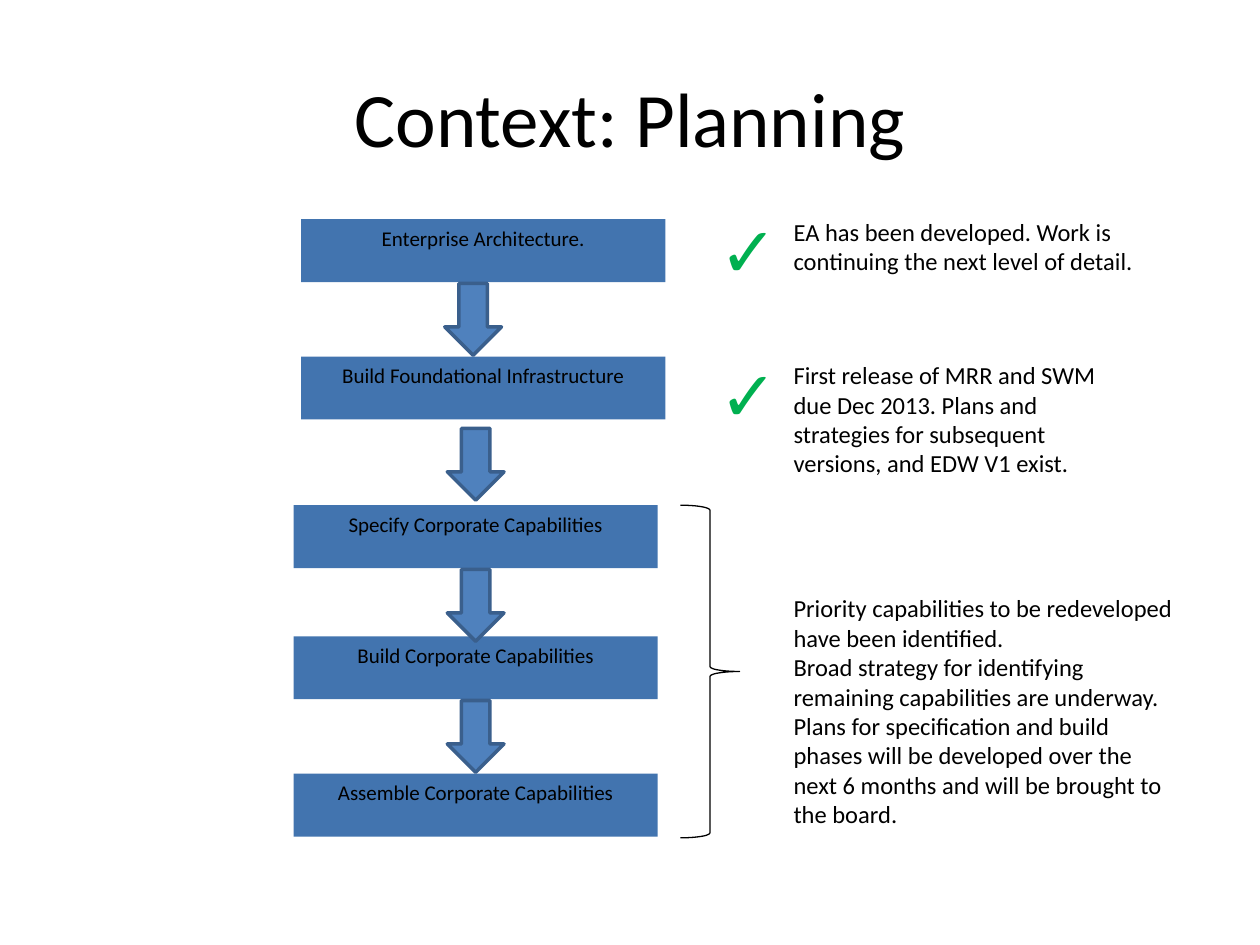
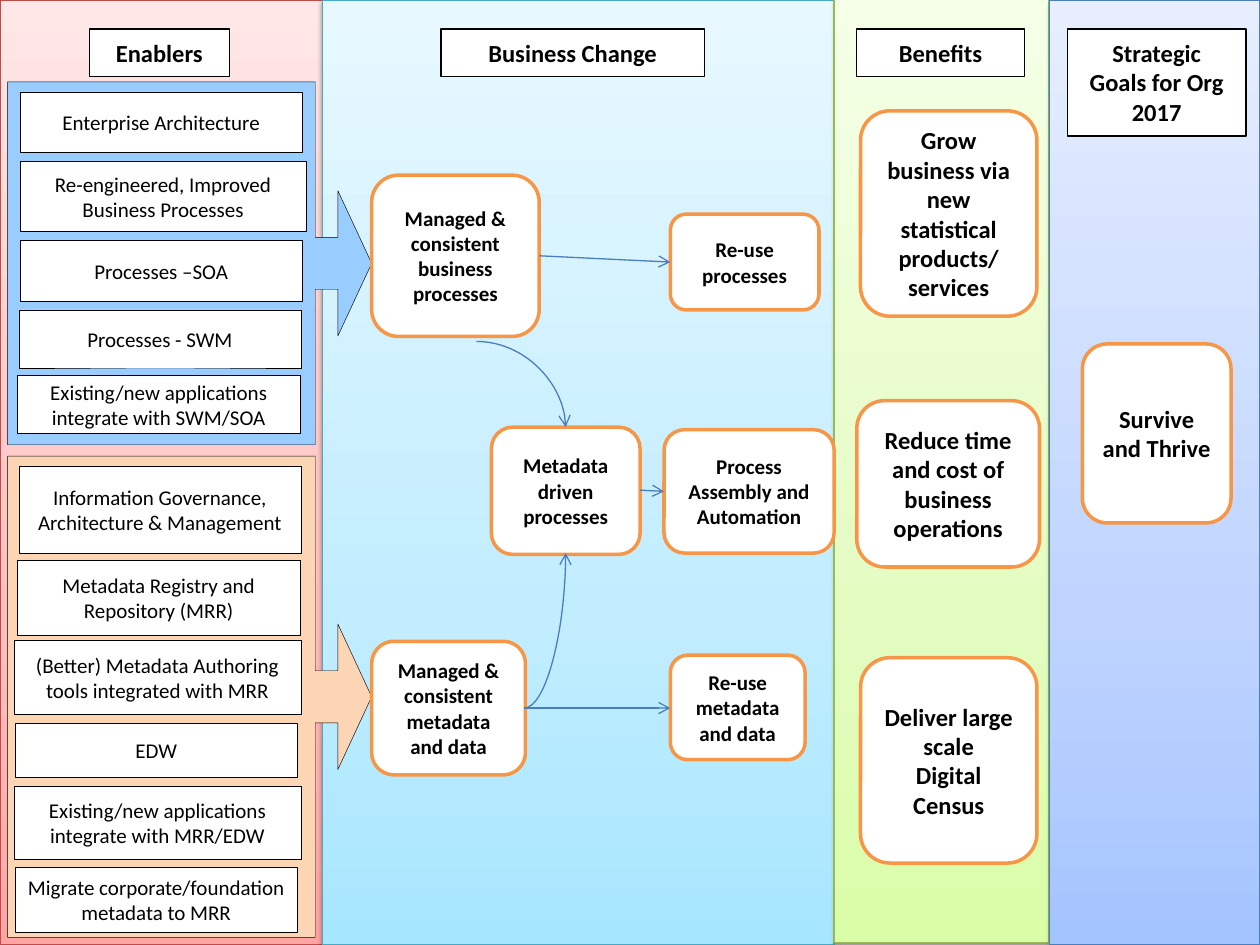
"""Build the planning context slide and the benefits map slide."""
from copy import deepcopy
from dataclasses import dataclass
from typing import NamedTuple

from lxml.etree import SubElement
from pptx import Presentation
from pptx.dml.color import RGBColor
from pptx.enum.shapes import MSO_CONNECTOR, MSO_SHAPE
from pptx.enum.text import MSO_ANCHOR, PP_ALIGN
from pptx.oxml.ns import qn
from pptx.presentation import Presentation as Deck
from pptx.shapes.autoshape import Shape
from pptx.shapes.base import BaseShape
from pptx.slide import Slide
from pptx.util import Inches, Pt


@dataclass(frozen=True)
class Theme:
    font: str = "Calibri"
    symbol_font: str = "Arial"
    ink: str = "000000"
    paper: str = "FFFFFF"
    step_fill: str = "4274AF"
    arrow_fill: str = "4F81BD"
    arrow_line: str = "3A5F8C"
    check: str = "00B050"
    outcome_line: str = "F79646"
    link: str = "4B7EBC"
    process_group: str = "99CCFF"
    metadata_group: str = "FCD5B5"
    title_size: float = 44
    check_size: float = 40
    body_size: float = 14
    label_size: float = 12
    thick: float = 2
    thin: float = 0.75
    hairline: float = 0.25


THEME = Theme()


class Frame(NamedTuple):
    left: float
    top: float
    width: float
    height: float


class Box(NamedTuple):
    text: str
    frame: Frame
    size: float = THEME.label_size


class Column(NamedTuple):
    frame: Frame
    gradient: tuple[str, str, str]
    line: str
    header: Box


class Group(NamedTuple):
    frame: Frame
    fill: str
    enablers: tuple[Box, ...]


class Link(NamedTuple):
    start: tuple[float, float]
    end: tuple[float, float]
    curved: bool = False


STEP_WIDTH, STEP_HEIGHT = 2.89, 0.5
STEPS = (
    ("Enterprise Architecture.", 2.39, 1.74),
    ("Build Foundational Infrastructure", 2.39, 2.83),
    ("Specify Corporate Capabilities", 2.33, 4.01),
    ("Build Corporate Capabilities", 2.33, 5.05),
    ("Assemble Corporate Capabilities", 2.33, 6.14),
)
STEP_ARROWS = ((3.47, 2.31), (3.49, 3.46), (3.49, 4.58), (3.49, 5.62))
CHECK_TOPS = (1.6, 2.74)
NOTES = (
    Box("EA has been developed. Work is continuing the next level of detail.",
        Frame(6.2, 1.67, 3.46, 0.57)),
    Box("First release of MRR and SWM due Dec 2013. Plans and strategies for "
        "subsequent versions, and EDW V1 exist.", Frame(6.2, 2.81, 2.68, 1.28)),
    Box("Priority capabilities to be redeveloped have been identified.\n"
        "Broad strategy for identifying remaining capabilities are underway. "
        "Plans for specification and build phases will be developed over the "
        "next 6 months and will be brought to the board.",
        Frame(6.2, 4.66, 3.27, 1.99)),
)

COLUMNS = (
    Column(Frame(0, 0, 2.56, 7.5), ("FFA6A5", "FFC0BF", "FFE7E7"), "BF4C48",
           Box("Enablers", Frame(0.71, 0.23, 1.11, 0.38))),
    Column(Frame(2.56, 0, 4.06, 7.5), ("A7E6FF", "C1EDFF", "E7F8FF"), "46AAC5",
           Box("Business Change", Frame(3.5, 0.23, 2.09, 0.38))),
    Column(Frame(6.62, -0.02, 1.7, 7.5), ("DAFDA7", "E4FCC2", "F5FFE7"), "98B955",
           Box("Benefits", Frame(6.8, 0.23, 1.33, 0.38))),
    Column(Frame(8.33, 0, 1.67, 7.5), ("A4C4FF", "BFD4FF", "E6EEFF"), "4B7EBC",
           Box("Strategic Goals for Org 2017", Frame(8.47, 0.23, 1.42, 0.85))),
)
GRADIENT_POSITIONS = (0, 0.35, 1)
CALLOUT_ADJUSTMENTS = (0.143, 0.2, 0.093, 0.845)

GROUPS = (
    Group(Frame(0.06, 0.65, 2.89, 2.88), THEME.process_group, (
        Box("Enterprise Architecture", Frame(0.16, 0.73, 2.24, 0.48)),
        Box("Re-engineered, Improved Business Processes", Frame(0.16, 1.28, 2.27, 0.56)),
        Box("Processes –SOA", Frame(0.16, 1.91, 2.24, 0.48)),
        Box("Processes - SWM", Frame(0.15, 2.46, 2.24, 0.46)),
        Box("Existing/new applications integrate with SWM/SOA",
            Frame(0.14, 2.98, 2.24, 0.46)),
    )),
    Group(Frame(0.06, 3.62, 2.89, 3.82), THEME.metadata_group, (
        Box("Information Governance, Architecture & Management",
            Frame(0.15, 3.7, 2.24, 0.69)),
        Box("Metadata Registry and Repository (MRR)", Frame(0.14, 4.45, 2.24, 0.59)),
        Box("(Better) Metadata Authoring tools integrated with MRR",
            Frame(0.11, 5.08, 2.28, 0.59)),
        Box("EDW", Frame(0.12, 5.74, 2.24, 0.43)),
        Box("Existing/new applications integrate with MRR/EDW",
            Frame(0.11, 6.24, 2.28, 0.58)),
        Box("Migrate corporate/foundation metadata to MRR",
            Frame(0.12, 6.88, 2.24, 0.52)),
    )),
)
OUTCOMES = (
    Box("Managed & consistent business processes", Frame(2.95, 1.39, 1.33, 1.28)),
    Box("Re-use processes", Frame(5.32, 1.7, 1.18, 0.76)),
    Box("Metadata driven processes", Frame(3.9, 3.39, 1.18, 1.01)),
    Box("Process Assembly and\nAutomation", Frame(5.27, 3.41, 1.35, 0.98)),
    Box("Managed & consistent metadata and data", Frame(2.95, 5.09, 1.22, 1.06)),
    Box("Re-use metadata and data", Frame(5.32, 5.2, 1.07, 0.83)),
    Box("Grow business via new statistical products/\vservices",
        Frame(6.83, 0.88, 1.4, 1.63), THEME.body_size),
    Box("Reduce time and cost of business operations",
        Frame(6.8, 3.18, 1.45, 1.32), THEME.body_size),
    Box("Deliver large scale\nDigital Census",
        Frame(6.83, 5.22, 1.4, 1.63), THEME.body_size),
    Box("Survive and Thrive", Frame(8.59, 2.73, 1.18, 1.42), THEME.body_size),
)
LINKS = (
    Link((4.28, 2.03), (5.32, 2.08)),
    Link((5.08, 3.89), (5.27, 3.9)),
    Link((4.16, 5.62), (5.32, 5.62)),
    Link((3.78, 2.71), (4.49, 3.39), curved=True),
    Link((4.16, 5.62), (4.49, 4.39), curved=True),
)


def emu(frame: Frame) -> list[Inches]:
    return [Inches(length) for length in frame]


def write(shape: BaseShape, text: str, *, size: float = THEME.label_size,
          font: str = THEME.font, color: str = THEME.ink, bold: bool = False,
          align: PP_ALIGN = PP_ALIGN.CENTER, anchor: MSO_ANCHOR = MSO_ANCHOR.MIDDLE,
          wrap: bool = True, inset: tuple[float, float] = (0.1, 0.05)) -> None:
    text_frame = shape.text_frame
    text_frame.word_wrap = wrap
    text_frame.vertical_anchor = anchor
    text_frame.margin_left = text_frame.margin_right = Inches(inset[0])
    text_frame.margin_top = text_frame.margin_bottom = Inches(inset[1])
    text_frame.text = text
    for paragraph in text_frame.paragraphs:
        paragraph.alignment = align
        for run in paragraph.runs:
            run.font.name = font
            run.font.size = Pt(size)
            run.font.bold = bold
            run.font.color.rgb = RGBColor.from_string(color)


def add_block(slide: Slide, kind: MSO_SHAPE, frame: Frame, *, fill: str = THEME.paper,
              line: str | None = None, weight: float = THEME.thin) -> Shape:
    shape = slide.shapes.add_shape(kind, *emu(frame))
    shape.shadow.inherit = False
    shape.fill.solid()
    shape.fill.fore_color.rgb = RGBColor.from_string(fill)
    if line is None:
        shape.line.fill.background()
    else:
        shape.line.color.rgb = RGBColor.from_string(line)
        shape.line.width = Pt(weight)
    return shape


def add_column(slide: Slide, column: Column) -> None:
    shape = add_block(slide, MSO_SHAPE.RECTANGLE, column.frame, line=column.line)
    shape.fill.gradient()
    shape.fill.gradient_angle = 90
    stop_list = next(shape.element.iter(qn("a:gsLst")))
    stop_list.append(deepcopy(stop_list[-1]))
    for stop, color, position in zip(
            shape.fill.gradient_stops, column.gradient, GRADIENT_POSITIONS):
        stop.color.rgb = RGBColor.from_string(color)
        stop.position = position
    effects = next(shape.element.iter(qn("a:effectLst")))
    shadow = SubElement(effects, qn("a:outerShdw"), blurRad=str(Pt(3.1)),
                        dist=str(Pt(1.6)), dir="5400000", rotWithShape="0")
    shadow_color = SubElement(shadow, qn("a:srgbClr"), val=THEME.ink)
    SubElement(shadow_color, qn("a:alpha"), val="38000")


def add_group(slide: Slide, group: Group) -> None:
    callout = add_block(slide, MSO_SHAPE.RIGHT_ARROW_CALLOUT, group.frame,
                        fill=group.fill, line=THEME.ink, weight=THEME.hairline)
    for index, adjustment in enumerate(CALLOUT_ADJUSTMENTS):
        callout.adjustments[index] = adjustment
    for enabler in group.enablers:
        shape = add_block(slide, MSO_SHAPE.RECTANGLE, enabler.frame,
                          line=THEME.ink, weight=THEME.hairline)
        write(shape, enabler.text, size=enabler.size)


def add_link(slide: Slide, link: Link) -> None:
    kind = MSO_CONNECTOR.CURVE if link.curved else MSO_CONNECTOR.STRAIGHT
    points = [Inches(length) for length in (*link.start, *link.end)]
    connector = slide.shapes.add_connector(kind, *points)
    connector.line.color.rgb = RGBColor.from_string(THEME.link)
    connector.line.width = Pt(THEME.thin)
    properties = connector.element.spPr
    SubElement(properties.find(qn("a:ln")), qn("a:tailEnd"), type="arrow")
    SubElement(properties, qn("a:effectLst"))
    if link.curved:
        properties.find(qn("a:prstGeom")).set("prst", "curvedConnector2")


def build_planning(presentation: Deck) -> None:
    slide = presentation.slides.add_slide(presentation.slide_layouts[5])
    title = slide.shapes.title
    title.left, title.top, title.width, title.height = emu(Frame(0.5, 0.3, 9, 1.25))
    write(title, "Context: Planning", size=THEME.title_size)
    for text, left, top in STEPS:
        step = add_block(slide, MSO_SHAPE.RECTANGLE,
                         Frame(left, top, STEP_WIDTH, STEP_HEIGHT), fill=THEME.step_fill)
        write(step, text, anchor=MSO_ANCHOR.TOP)
    for left, top in STEP_ARROWS:
        arrow = add_block(slide, MSO_SHAPE.RIGHT_ARROW, Frame(left, top, 0.57, 0.45),
                          fill=THEME.arrow_fill, line=THEME.arrow_line,
                          weight=THEME.thick)
        arrow.rotation = 90
    add_block(slide, MSO_SHAPE.RIGHT_BRACE, Frame(5.4, 4.01, 0.47, 2.64), line=THEME.ink)
    for note in NOTES:
        write(slide.shapes.add_textbox(*emu(note.frame)), note.text,
              size=THEME.body_size, align=PP_ALIGN.LEFT, anchor=MSO_ANCHOR.TOP)
    for top in CHECK_TOPS:
        write(slide.shapes.add_textbox(*emu(Frame(5.61, top, 0.64, 0.77))), "✓",
              size=THEME.check_size, font=THEME.symbol_font, color=THEME.check,
              align=PP_ALIGN.LEFT, anchor=MSO_ANCHOR.TOP, wrap=False)


def build_benefits_map(presentation: Deck) -> None:
    slide = presentation.slides.add_slide(presentation.slide_layouts[6])
    for column in COLUMNS:
        add_column(slide, column)
    for column in COLUMNS:
        header = add_block(slide, MSO_SHAPE.RECTANGLE, column.header.frame, line=THEME.ink)
        write(header, column.header.text, size=THEME.body_size, bold=True,
              anchor=MSO_ANCHOR.TOP, inset=(0.14, 0.07))
    for group in GROUPS:
        add_group(slide, group)
    for outcome in OUTCOMES:
        shape = add_block(slide, MSO_SHAPE.ROUNDED_RECTANGLE, outcome.frame,
                          line=THEME.outcome_line, weight=THEME.thick)
        write(shape, outcome.text, size=outcome.size, bold=True)
    for link in LINKS:
        add_link(slide, link)


def main() -> None:
    presentation = Presentation()
    presentation.slide_width = Inches(10)
    presentation.slide_height = Inches(7.5)
    build_planning(presentation)
    build_benefits_map(presentation)
    presentation.save("out.pptx")


if __name__ == "__main__":
    main()
